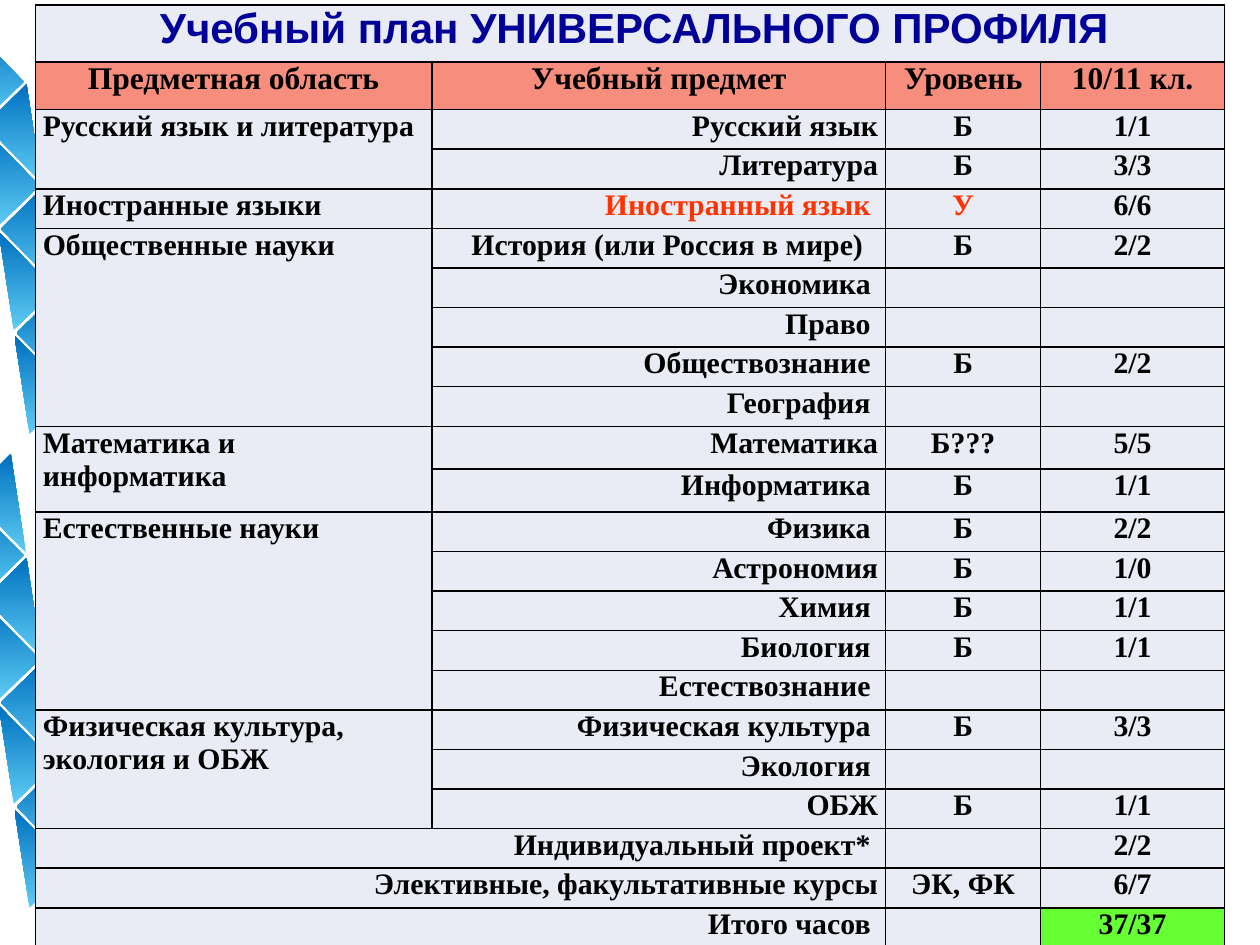
import math
from dataclasses import dataclass

import pptx
import pptx.dml.color
import pptx.enum.text
import pptx.oxml
import pptx.oxml.ns
import pptx.util
from pptx.util import Inches

ALIGN = pptx.enum.text.PP_ALIGN


@dataclass(frozen=True)
class Theme:
    heading_font: str = "Arial"
    body_font: str = "Times New Roman"
    title_size: int = 24
    header_size: int = 18
    body_size: int = 17
    title: str = "000099"
    text: str = "000000"
    advanced: str = "FF3300"
    cell: str = "E9EBF5"
    header: str = "F78D7C"
    total: str = "66FF33"
    ribbon_light: str = "5ECCF3"
    ribbon_dark: str = "0070C0"


THEME = Theme()

TITLE = "Учебный план УНИВЕРСАЛЬНОГО ПРОФИЛЯ"
HEADERS = ("Предметная область", "Учебный предмет", "Уровень", "10/11 кл.")
ADVANCED_LEVEL = "У"
AREAS = (
    ("Русский язык и литература", (
        ("Русский язык", "Б", "1/1"),
        ("Литература", "Б", "3/3"))),
    ("Иностранные языки", (
        ("Иностранный язык ", ADVANCED_LEVEL, "6/6"),)),
    ("Общественные науки", (
        ("История (или Россия в мире)  ", "Б", "2/2"),
        ("Экономика ", "", ""),
        ("Право ", "", ""),
        ("Обществознание ", "Б", "2/2"),
        ("География ", "", ""))),
    ("Математика и информатика", (
        ("Математика", "Б???", "5/5"),
        ("Информатика ", "Б", "1/1"))),
    ("Естественные науки", (
        ("Физика ", "Б", "2/2"),
        ("Астрономия", "Б", "1/0"),
        ("Химия ", "Б", "1/1"),
        ("Биология ", "Б", "1/1"),
        ("Естествознание ", "", ""))),
    ("Физическая культура, экология и ОБЖ", (
        ("Физическая культура ", "Б", "3/3"),
        ("Экология ", "", ""),
        ("ОБЖ", "Б", "1/1"))),
)
SUMMARY = (
    ("Индивидуальный проект* ", "", "2/2"),
    ("Элективные, факультативные курсы", "ЭК, ФК", "6/7"),
    ("Итого часов ", "", "37/37"),
)

COLUMN_WIDTHS = (3.15, 3.6, 1.23, 1.46)
FIXED_ROWS = {0: 0.45, 1: 0.38, 10: 0.34, 11: 0.34}
ROW_COUNT = 2 + sum(len(subjects) for _, subjects in AREAS) + len(SUMMARY)


def rgb(value):
    return pptx.dml.color.RGBColor.from_string(value)


def write(paragraph, text, size=THEME.body_size, font=THEME.body_font,
          color=THEME.text, align=ALIGN.CENTER):
    paragraph.alignment = align
    if not text:
        return
    run = paragraph.add_run()
    run.text = text
    run.font.size = pptx.util.Pt(size)
    run.font.name = font
    run.font.bold = True
    run.font.color.rgb = rgb(color)


def style_cell(cell, fill):
    """Give a cell its fill, insets and thin black border."""
    cell.margin_left = cell.margin_right = Inches(0.06)
    cell.margin_top = cell.margin_bottom = 0
    cell.fill.solid()
    cell.fill.fore_color.rgb = rgb(fill)
    properties = cell._tc.get_or_add_tcPr()
    for position, side in enumerate("LRTB"):
        properties.insert(position, pptx.oxml.parse_xml(
            f'<a:ln{side} {pptx.oxml.ns.nsdecls("a")} w="12700"><a:solidFill>'
            f'<a:srgbClr val="{THEME.text}"/></a:solidFill></a:ln{side}>'))


def fill_record(table, row, subject_column, record):
    """Write a subject with its level and hours."""
    subject, level, hours = record
    color = THEME.advanced if level == ADVANCED_LEVEL else THEME.text
    write(table.cell(row, subject_column).text_frame.paragraphs[0], subject,
          color=color, align=ALIGN.RIGHT)
    write(table.cell(row, 2).text_frame.paragraphs[0], level, color=color)
    write(table.cell(row, 3).text_frame.paragraphs[0], hours)


def add_curriculum(slide, left, top, width, height):
    table = slide.shapes.add_table(
        ROW_COUNT, len(COLUMN_WIDTHS), Inches(left), Inches(top),
        Inches(width), Inches(height)).table
    table.first_row = table.horz_banding = False
    for column, share in zip(table.columns, COLUMN_WIDTHS):
        column.width = Inches(width * share / sum(COLUMN_WIDTHS))
    regular = ((height - sum(FIXED_ROWS.values()))
               / (ROW_COUNT - len(FIXED_ROWS)))
    for index, row in enumerate(table.rows):
        row.height = Inches(FIXED_ROWS.get(index, regular))
        for cell in row.cells:
            style_cell(cell, THEME.header if index == 1 else THEME.cell)

    table.cell(0, 0).merge(table.cell(0, 3))
    title = table.cell(0, 0).text_frame.paragraphs[0]
    for text, size in ((" ", THEME.header_size), (TITLE, THEME.title_size)):
        write(title, text, size=size, font=THEME.heading_font,
              color=THEME.title)
    for column, header in enumerate(HEADERS):
        write(table.cell(1, column).text_frame.paragraphs[0], header,
              size=THEME.header_size)

    row = 2
    for area, subjects in AREAS:
        area_cell = table.cell(row, 0)
        if len(subjects) > 1:
            area_cell.merge(table.cell(row + len(subjects) - 1, 0))
        write(area_cell.text_frame.paragraphs[0], area, align=ALIGN.LEFT)
        for record in subjects:
            fill_record(table, row, 1, record)
            row += 1
    for record in SUMMARY:
        table.cell(row, 0).merge(table.cell(row, 1))
        fill_record(table, row, 0, record)
        row += 1
    total = table.cell(ROW_COUNT - 1, 3)
    total.fill.fore_color.rgb = rgb(THEME.total)


def add_facet(slide, center_x, center_y, corners):
    """Add one tilted triangle; corners are fractions of its box."""
    width, height, tilt = 0.64, 0.46, 45.6
    left, top = center_x - width / 2, center_y - height / 2
    points = [(Inches(left + x * width), Inches(top + y * height))
              for x, y in corners]
    builder = slide.shapes.build_freeform(*points[0])
    builder.add_line_segments(points[1:], close=True)
    facet = builder.convert_to_shape()
    facet.rotation = tilt
    facet.shadow.inherit = False
    facet.line.fill.background()
    facet.fill.gradient()
    facet.fill.gradient_angle = 90 + tilt
    colors = (THEME.ribbon_light, THEME.ribbon_dark)
    for stop, color in zip(facet.fill.gradient_stops, colors):
        stop.color.rgb = rgb(color)


def add_ribbon(slide, left, top, outer_steps, inner_steps):
    """Add a slanting band of facets; steps count tiles along the slant."""
    step_x, step_y = 0.125, 0.825
    for steps, x, y, corners in (
            (outer_steps, 0, 0, ((1, 0), (0, 0), (1, 1))),
            (inner_steps, 0.47, 0.48, ((0, 0), (0, 1), (1, 1)))):
        for step in steps:
            add_facet(slide, left + x + step * step_x,
                      top + y + step * step_y, corners)


def main():
    presentation = pptx.Presentation()
    presentation.slide_width = Inches(10)
    presentation.slide_height = Inches(7.5)
    slide = presentation.slides.add_slide(presentation.slide_layouts[6])
    add_ribbon(slide, -0.2, 0.58, range(4), range(3))
    add_ribbon(slide, -0.2, 4.34, range(4), range(-1, 3))
    add_curriculum(slide, 0.28, 0.04, math.fsum(COLUMN_WIDTHS), 7.48)
    presentation.save("out.pptx")


if __name__ == "__main__":
    main()
